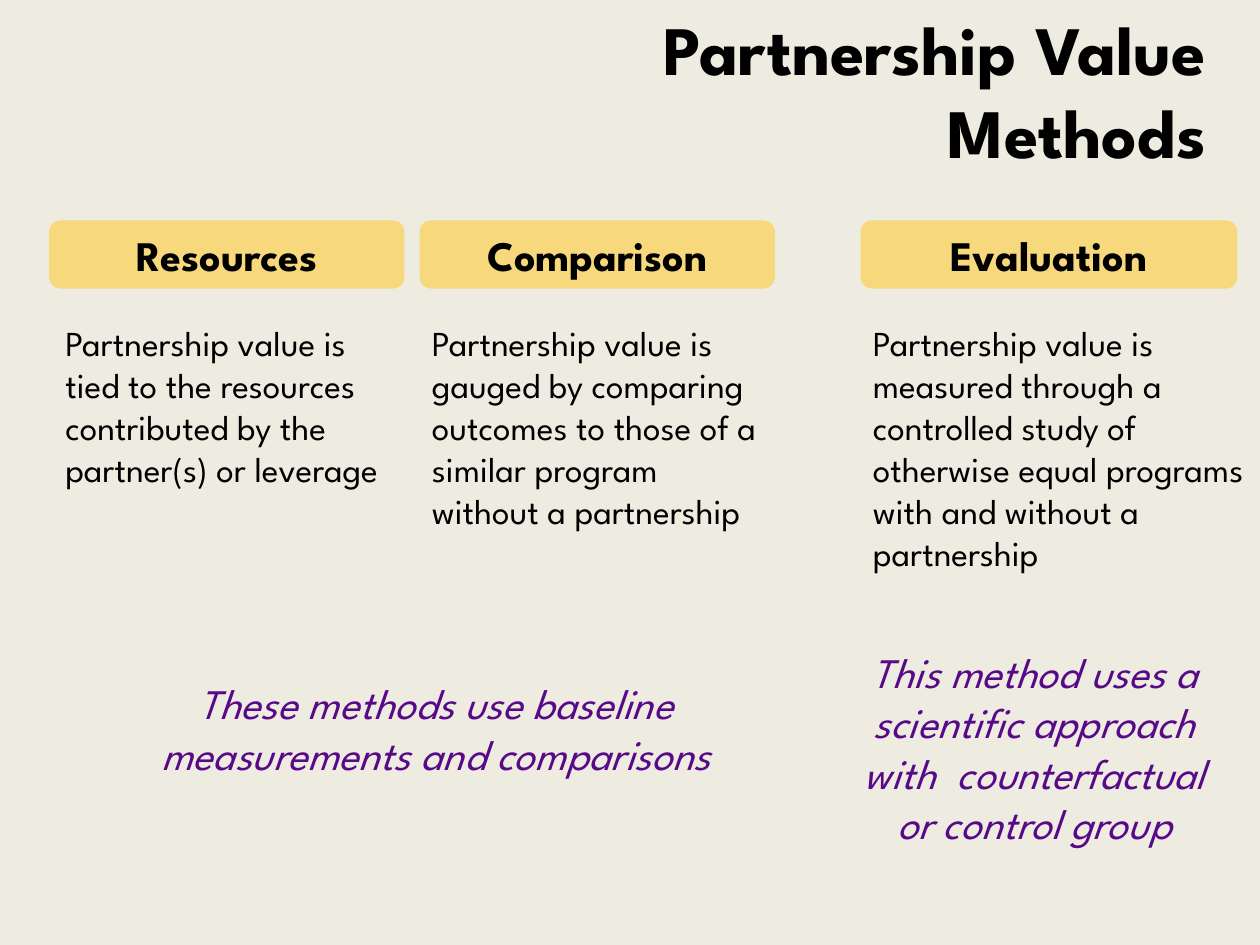
import pptx
import pptx.dml.color
import pptx.enum.shapes
import pptx.enum.text
import pptx.util
from pptx.util import Inches

FONT = "League Spartan"
CREAM = pptx.dml.color.RGBColor(0xEE, 0xEC, 0xE1)
GOLD = pptx.dml.color.RGBColor(0xF8, 0xD8, 0x7C)
BLACK = pptx.dml.color.RGBColor(0x00, 0x00, 0x00)
PURPLE = pptx.dml.color.RGBColor(0x58, 0x09, 0x89)

ALIGN = pptx.enum.text.PP_ALIGN
ANCHOR = pptx.enum.text.MSO_ANCHOR

METHODS = [
    ("Resources", (0.39, 2.82), (0.42, 2.75),
     "Partnership value is tied to the resources contributed by the partner(s) or leverage"),
    ("Comparison", (3.33, 2.82), (3.33, 2.83),
     "Partnership value is gauged by comparing outcomes to those of a similar program "
     "without a partnership"),
    ("Evaluation", (6.83, 2.99), (6.83, 3.17),
     "Partnership value is measured through a controlled study of otherwise equal programs "
     "with and without a partnership"),
]


def write_text(shape, text, size, align, anchor, color=BLACK, bold=False, italic=False):
    """Fill a shape with one paragraph of formatted text."""
    frame = shape.text_frame
    frame.text = text
    frame.word_wrap = True
    frame.vertical_anchor = anchor
    para = frame.paragraphs[0]
    para.alignment = align
    font = para.runs[0].font
    font.name = FONT
    font.size = pptx.util.Pt(size)
    font.bold = bold
    font.italic = italic
    font.color.rgb = color


def add_text(page, left, top, width, height, text, size,
             align=ALIGN.LEFT, anchor=ANCHOR.TOP, **style):
    """Add a wrapping text box."""
    box = page.shapes.add_textbox(Inches(left), Inches(top), Inches(width), Inches(height))
    write_text(box, text, size, align, anchor, **style)


def add_heading(page, left, width, text):
    """Add a rounded gold column heading."""
    heading = page.shapes.add_shape(
        pptx.enum.shapes.MSO_SHAPE.ROUNDED_RECTANGLE,
        Inches(left), Inches(1.75), Inches(width), Inches(0.54))
    heading.shadow.inherit = False
    heading.fill.solid()
    heading.fill.fore_color.rgb = GOLD
    heading.line.fill.background()
    write_text(heading, text, 24, ALIGN.CENTER, ANCHOR.MIDDLE, bold=True)


def add_remark(page, left, top, width, height, text):
    """Add a centred purple remark below the columns."""
    add_text(page, left, top, width, height, text, 24,
             align=ALIGN.CENTER, color=PURPLE, italic=True)


def main():
    """Build the slide and save it."""
    deck = pptx.Presentation()
    deck.slide_width, deck.slide_height = Inches(10), Inches(7.5)
    page = deck.slides.add_slide(deck.slide_layouts[6])
    page.background.fill.solid()
    page.background.fill.fore_color.rgb = CREAM

    add_text(page, 3.25, 0.25, 6.42, 0.92, "Partnership Value Methods", 39.6,
             align=ALIGN.RIGHT, anchor=ANCHOR.MIDDLE, bold=True)
    for name, (head_left, head_width), (left, width), description in METHODS:
        add_heading(page, head_left, head_width, name)
        add_text(page, left, 2.5, width, 2.12, description, 20)
    add_remark(page, 0.5, 5.33, 5.92, 0.91,
               "These methods use baseline measurements and comparisons")
    add_remark(page, 6.67, 5.08, 3.08, 2.12,
               "This method uses a scientific approach with  counterfactual or control group")
    deck.save("out.pptx")


if __name__ == "__main__":
    main()
